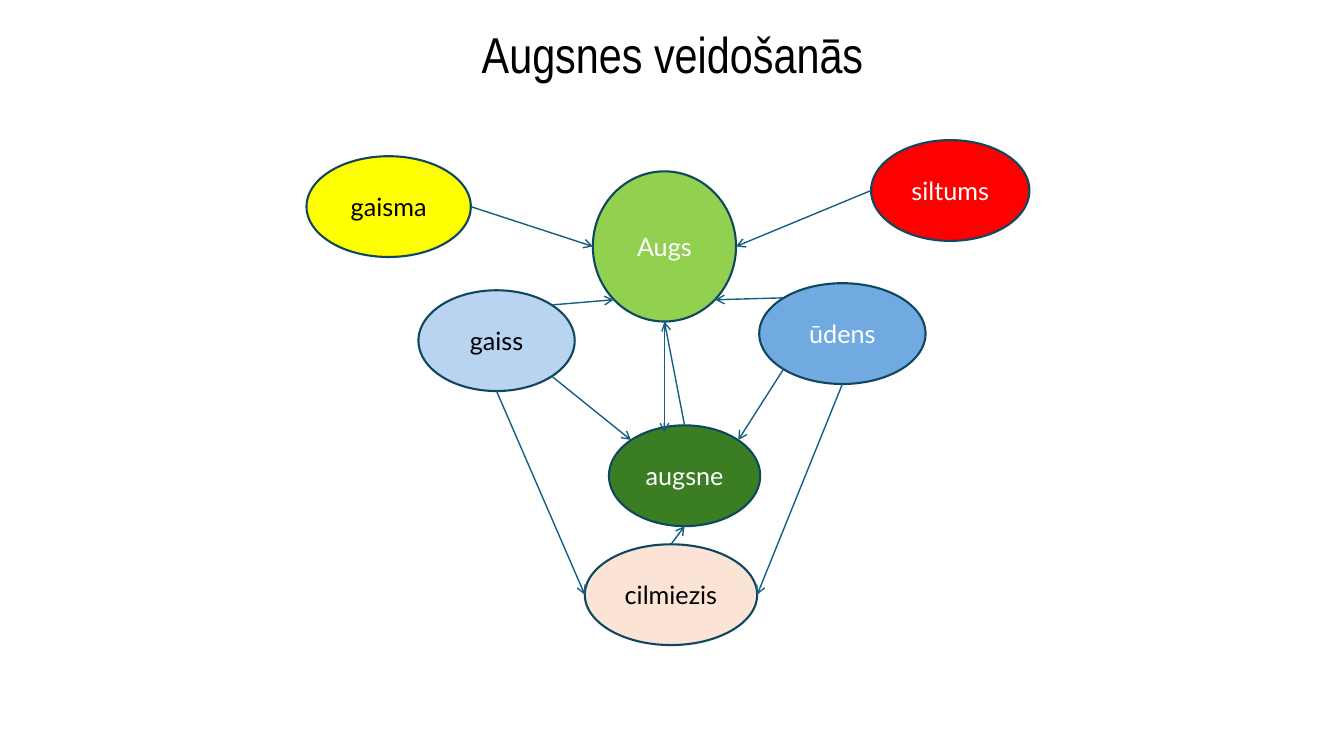
"""Build the slide on soil formation: factors as ellipses, influences as arrows."""
from dataclasses import dataclass
from enum import Enum
from typing import Any

from lxml.etree import SubElement
from pptx import Presentation
from pptx.dml.color import RGBColor
from pptx.enum.shapes import MSO_CONNECTOR, MSO_SHAPE
from pptx.enum.text import MSO_ANCHOR, MSO_AUTO_SIZE, PP_ALIGN
from pptx.oxml.ns import qn
from pptx.slide import Slide
from pptx.text.text import TextFrame
from pptx.util import Inches, Pt


@dataclass(frozen=True)
class Theme:
    black: str = "000000"
    white: str = "FFFFFF"
    outline: str = "104760"
    arrow: str = "156082"
    title_font: str = "Arial Narrow"
    label_font: str = "Lato"
    title_size: float = 36
    label_size: float = 18
    outline_width: float = 1.5
    arrow_width: float = 1


THEME = Theme()
DIAGONAL = 0.71


class Site(Enum):
    TOP = (0, -1)
    BOTTOM = (0, 1)
    LEFT = (-1, 0)
    RIGHT = (1, 0)
    TOP_LEFT = (-DIAGONAL, -DIAGONAL)
    TOP_RIGHT = (DIAGONAL, -DIAGONAL)
    BOTTOM_LEFT = (-DIAGONAL, DIAGONAL)
    BOTTOM_RIGHT = (DIAGONAL, DIAGONAL)


@dataclass(frozen=True)
class Factor:
    label: str
    left: float
    top: float
    width: float
    fill: str
    ink: str
    height: float = 1

    def point(self, site: Site) -> tuple[float, float]:
        across, down = site.value
        return (self.left + self.width / 2 * (1 + across),
                self.top + self.height / 2 * (1 + down))


@dataclass(frozen=True)
class Influence:
    source: Factor
    leaves: Site
    target: Factor
    enters: Site


LIGHT = Factor("gaisma", 3.04, 1.55, 1.63, "FFFF00", THEME.black)
HEAT = Factor("siltums", 8.64, 1.39, 1.57, "FF0000", THEME.white)
PLANT = Factor("Augs", 5.88, 1.7, 1.42, "92D050", THEME.white, 1.49)
SOIL = Factor("augsne", 6.04, 4.22, 1.5, "3B7D23", THEME.white)
ROCK = Factor("cilmiezis", 5.8, 5.4, 1.71, "FBE3D6", THEME.black)
AIR = Factor("gaiss", 4.15, 2.88, 1.55, "B8D4F0", THEME.black)
WATER = Factor("ūdens", 7.53, 2.81, 1.65, "71AAE0", THEME.white)
FACTORS = (LIGHT, HEAT, PLANT, SOIL, ROCK, AIR, WATER)

INFLUENCES = (
    Influence(LIGHT, Site.RIGHT, PLANT, Site.LEFT),
    Influence(HEAT, Site.LEFT, PLANT, Site.RIGHT),
    Influence(AIR, Site.TOP_RIGHT, PLANT, Site.BOTTOM_LEFT),
    Influence(WATER, Site.TOP_LEFT, PLANT, Site.BOTTOM_RIGHT),
    Influence(AIR, Site.BOTTOM_RIGHT, SOIL, Site.TOP_LEFT),
    Influence(WATER, Site.BOTTOM_LEFT, SOIL, Site.TOP_RIGHT),
    Influence(AIR, Site.BOTTOM, ROCK, Site.LEFT),
    Influence(WATER, Site.BOTTOM, ROCK, Site.RIGHT),
    Influence(ROCK, Site.TOP, SOIL, Site.BOTTOM),
    Influence(SOIL, Site.TOP, PLANT, Site.BOTTOM),
)
PLANT_TO_SOIL_DROP = 1.1


def apply(target: Any, values: dict[str, Any]) -> None:
    for name, value in values.items():
        setattr(target, name, value)


def write(frame: TextFrame, text: str, font: str, size: float, ink: str,
          spacing: float = 1) -> None:
    frame.text = text
    paragraph = frame.paragraphs[0]
    run_font = paragraph.runs[0].font
    apply(frame, {"word_wrap": True, "auto_size": MSO_AUTO_SIZE.NONE,
                  "vertical_anchor": MSO_ANCHOR.MIDDLE})
    apply(paragraph, {"alignment": PP_ALIGN.CENTER, "line_spacing": spacing})
    apply(run_font, {"name": font, "size": Pt(size)})
    run_font.color.rgb = RGBColor.from_string(ink)


def draw_title(slide: Slide, text: str) -> None:
    title = slide.shapes.title
    apply(title, {"left": Inches(2.17), "top": Inches(0.3),
                  "width": Inches(9), "height": Inches(0.54)})
    write(title.text_frame, text, THEME.title_font, THEME.title_size, THEME.black, 0.9)


def draw_factor(slide: Slide, factor: Factor) -> None:
    ellipse = slide.shapes.add_shape(
        MSO_SHAPE.OVAL, Inches(factor.left), Inches(factor.top),
        Inches(factor.width), Inches(factor.height))
    ellipse.shadow.inherit = False
    ellipse.fill.solid()
    ellipse.fill.fore_color.rgb = RGBColor.from_string(factor.fill)
    ellipse.line.color.rgb = RGBColor.from_string(THEME.outline)
    ellipse.line.width = Pt(THEME.outline_width)
    write(ellipse.text_frame, factor.label, THEME.label_font, THEME.label_size, factor.ink)


def draw_arrow(slide: Slide, start: tuple[float, float], end: tuple[float, float]) -> None:
    arrow = slide.shapes.add_connector(
        MSO_CONNECTOR.STRAIGHT, *(Inches(length) for length in start + end))
    arrow.line.color.rgb = RGBColor.from_string(THEME.arrow)
    arrow.line.width = Pt(THEME.arrow_width)
    SubElement(arrow.line._get_or_add_ln(), qn("a:tailEnd"), type="arrow")
    SubElement(arrow._element.spPr, qn("a:effectLst"))


def main() -> None:
    presentation = Presentation()
    apply(presentation, {"slide_width": Inches(13.33), "slide_height": Inches(7.5)})
    slide = presentation.slides.add_slide(presentation.slide_layouts[5])
    draw_title(slide, "Augsnes veidošanās")
    for factor in FACTORS:
        draw_factor(slide, factor)
    for influence in INFLUENCES:
        draw_arrow(slide, influence.source.point(influence.leaves),
                   influence.target.point(influence.enters))
    plant_x, plant_y = PLANT.point(Site.BOTTOM)
    draw_arrow(slide, (plant_x, plant_y), (plant_x, plant_y + PLANT_TO_SOIL_DROP))
    presentation.save("out.pptx")


if __name__ == "__main__":
    main()
